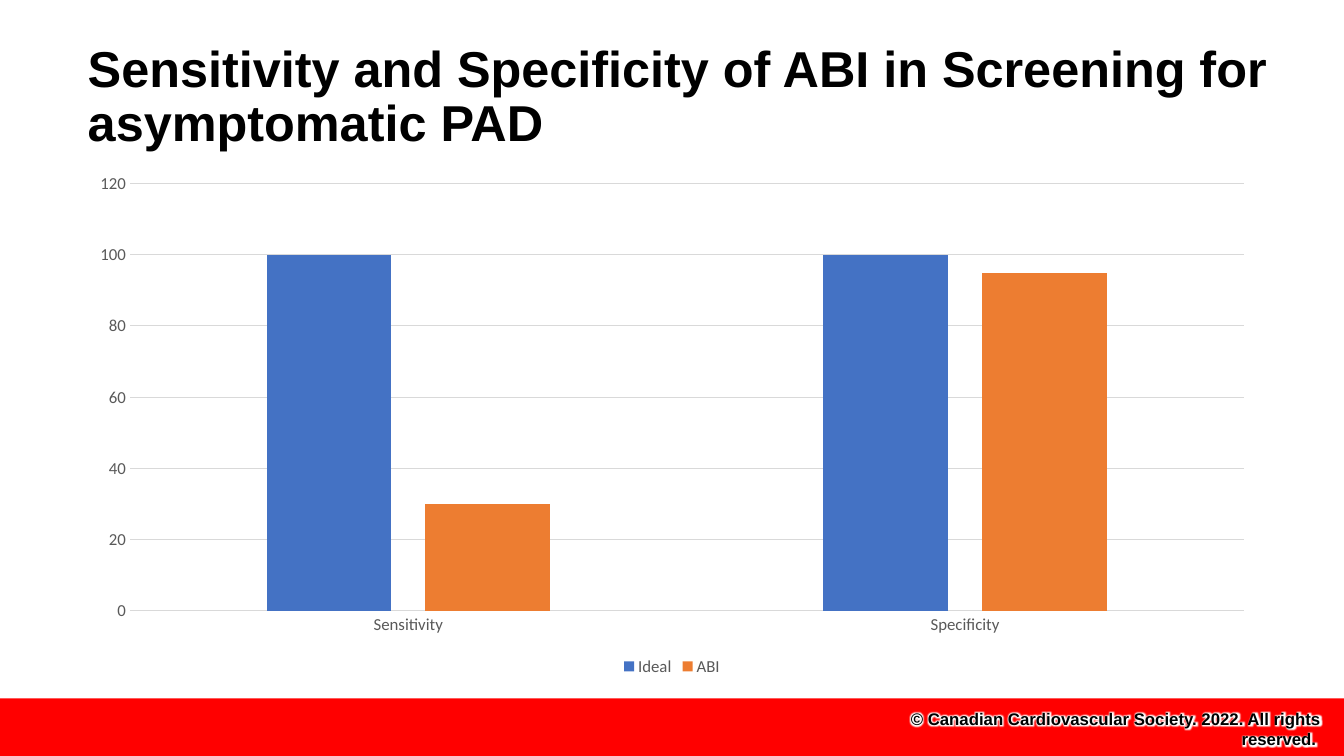
from lxml.etree import SubElement
from pptx import Presentation
from pptx.chart.data import CategoryChartData
from pptx.dml.color import RGBColor
from pptx.enum.chart import XL_CHART_TYPE, XL_LEGEND_POSITION, XL_TICK_MARK
from pptx.enum.shapes import MSO_SHAPE
from pptx.enum.text import MSO_ANCHOR, PP_ALIGN
from pptx.oxml.ns import qn
from pptx.util import Inches, Pt

BLACK = RGBColor(0x00, 0x00, 0x00)
RED = RGBColor(0xFF, 0x00, 0x00)
GRAY_TEXT = RGBColor(0x59, 0x59, 0x59)
GRAY_LINE = RGBColor(0xD9, 0xD9, 0xD9)
BLUE = RGBColor(0x44, 0x72, 0xC4)
ORANGE = RGBColor(0xED, 0x7D, 0x31)

CATEGORIES = ["Sensitivity", "Specificity"]
SERIES = {"Ideal": ([100, 100], BLUE), "ABI": ([30, 95], ORANGE)}


def box(left, top, width, height):
    return Inches(left), Inches(top), Inches(width), Inches(height)


def format_font(font, color, **values):
    font.color.rgb = color
    for name, value in values.items():
        setattr(font, name, value)


def format_line(line):
    line.color.rgb = GRAY_LINE
    line.width = Pt(0.75)


def add_glow(run):
    """Put a soft white halo around the letters."""
    properties = run.font._element
    effects = SubElement(properties, qn("a:effectLst"))
    glow = SubElement(effects, qn("a:glow"), rad="63500")
    SubElement(glow, qn("a:srgbClr"), val="FFFFFF")
    properties.find(qn("a:latin")).addprevious(effects)


def add_footer(slide):
    band = slide.shapes.add_shape(MSO_SHAPE.RECTANGLE, *box(0, 6.93, 13.33, 0.57))
    band.shadow.inherit = False
    band.fill.solid()
    band.fill.fore_color.rgb = RED
    band.line.fill.background()

    frame = slide.shapes.add_textbox(*box(8.7, 6.98, 4.5, 0.3)).text_frame
    frame.word_wrap = True
    paragraph = frame.paragraphs[0]
    paragraph.alignment = PP_ALIGN.RIGHT
    copyright_run = paragraph.add_run()
    copyright_run.text = "© Canadian Cardiovascular Society. 2022. All rights reserved. "
    format_font(copyright_run.font, BLACK, name="Arial", size=Pt(12), bold=True)
    add_glow(copyright_run)


def set_title(slide, text):
    title = slide.shapes.title
    title.left, title.top, title.width, title.height = box(0.77, 0.44, 12.6, 1.07)
    frame = title.text_frame
    frame.text = text
    frame.word_wrap = True
    frame.vertical_anchor = MSO_ANCHOR.MIDDLE
    paragraph = frame.paragraphs[0]
    paragraph.alignment = PP_ALIGN.LEFT
    paragraph.line_spacing = 0.9
    format_font(paragraph.runs[0].font, BLACK, name="Arial", size=Pt(36), bold=True)


def add_accuracy_chart(slide):
    data = CategoryChartData()
    data.categories = CATEGORIES
    for name, (values, _) in SERIES.items():
        data.add_series(name, values)
    chart = slide.shapes.add_chart(
        XL_CHART_TYPE.COLUMN_CLUSTERED, *box(0.76, 1.62, 11.81, 5.13), data
    ).chart
    chart.has_title = False
    format_font(chart.font, GRAY_TEXT, name="Calibri", size=Pt(12))

    plot = chart.plots[0]
    plot.gap_width, plot.overlap, plot.vary_by_categories = 219, -27, False
    for series, (_, color) in zip(plot.series, SERIES.values()):
        series.format.fill.solid()
        series.format.fill.fore_color.rgb = color

    for axis in (chart.category_axis, chart.value_axis):
        axis.major_tick_mark = axis.minor_tick_mark = XL_TICK_MARK.NONE
        format_font(axis.tick_labels.font, GRAY_TEXT, name="Calibri", size=Pt(12))
    format_line(chart.category_axis.format.line)
    chart.value_axis.format.line.fill.background()
    chart.value_axis.minimum_scale = 0
    chart.value_axis.maximum_scale = 120
    chart.value_axis.major_unit = 20
    format_line(chart.value_axis.major_gridlines.format.line)

    chart.has_legend = True
    chart.legend.position = XL_LEGEND_POSITION.BOTTOM
    chart.legend.include_in_layout = False
    format_font(chart.legend.font, GRAY_TEXT, name="Calibri", size=Pt(12))


def main():
    presentation = Presentation()
    presentation.slide_width = Inches(13.33)
    presentation.slide_height = Inches(7.5)
    slide = presentation.slides.add_slide(presentation.slide_layouts[5])
    add_footer(slide)
    set_title(slide, "Sensitivity and Specificity of ABI in Screening for asymptomatic PAD")
    add_accuracy_chart(slide)
    presentation.save("out.pptx")


if __name__ == "__main__":
    main()
